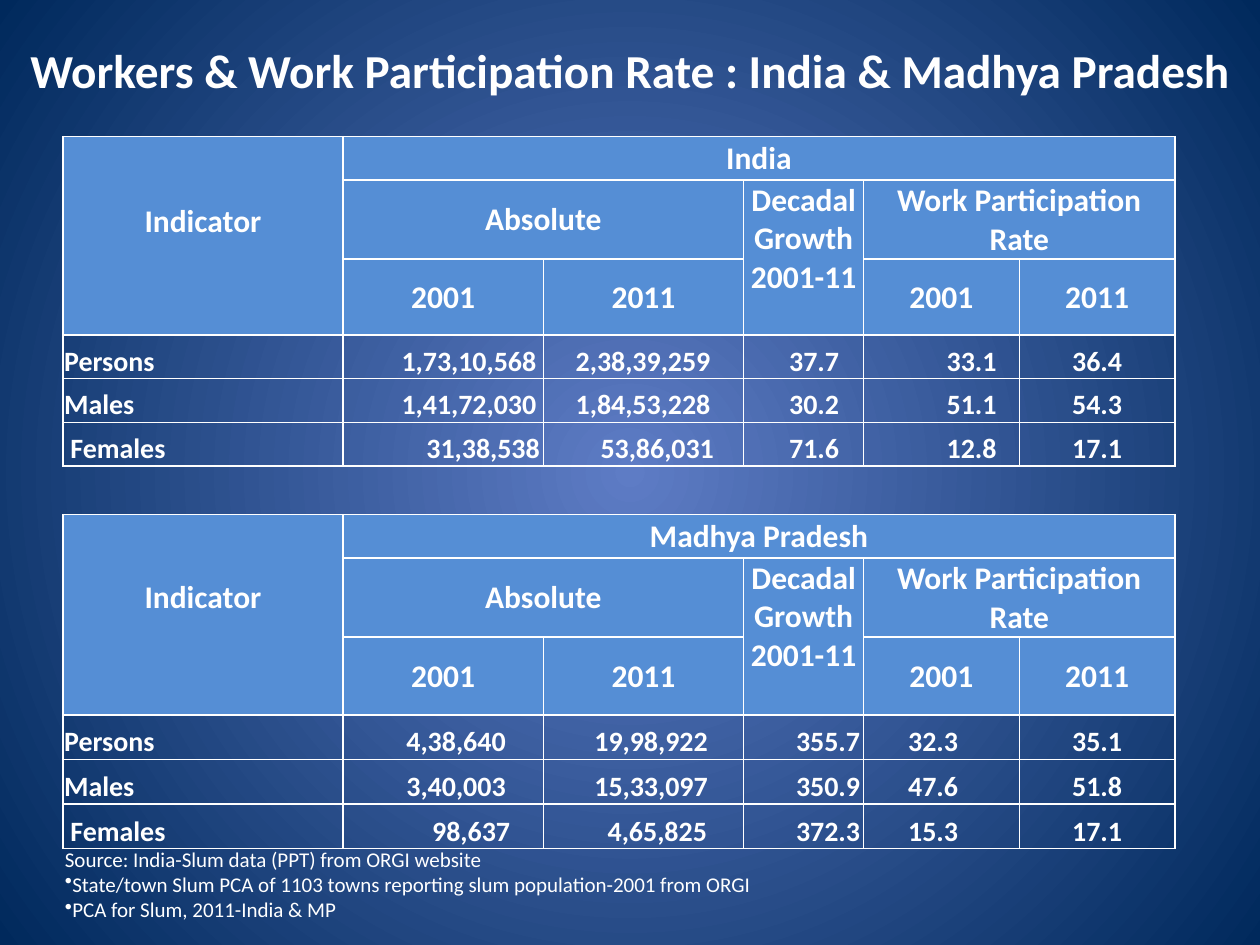
from dataclasses import dataclass

from lxml import etree
from pptx import Presentation
from pptx.dml.color import RGBColor
from pptx.enum.text import MSO_ANCHOR, PP_ALIGN
from pptx.oxml.ns import qn
from pptx.util import Pt

LEFT, MID, RIGHT = PP_ALIGN.LEFT, PP_ALIGN.CENTER, PP_ALIGN.RIGHT
TOP, CENTER, BOTTOM = MSO_ANCHOR.TOP, MSO_ANCHOR.MIDDLE, MSO_ANCHOR.BOTTOM


@dataclass(frozen=True)
class Theme:
    face: str = "Calibri"
    ink: str = "FFFFFF"
    head: str = "558ED5"
    inner: str = "5E7CC5"
    outer: str = "00295C"
    title: int = 27
    label: int = 18
    data: int = 16
    note: int = 12


class Deck:
    def __init__(self, theme):
        self.theme = theme
        self.file = Presentation()
        self.file.slide_width, self.file.slide_height = Pt(720), Pt(540)
        self.slide = self.file.slides.add_slide(self.file.slide_layouts[6])

    def glow(self):
        """Fill the background with a gradient that spreads from the centre."""
        fill = self.slide.background.fill
        fill.gradient()
        colors = (self.theme.inner, self.theme.outer)
        for stop, color in zip(fill.gradient_stops, colors):
            stop.color.rgb = RGBColor.from_string(color)
        grad = self.slide.element.find(".//" + qn("a:gradFill"))
        grad.remove(grad.find(qn("a:lin")))
        ring = etree.SubElement(grad, qn("a:path"), path="circle")
        etree.SubElement(ring, qn("a:fillToRect"),
                         dict.fromkeys("ltrb", "50000"))

    def style(self, par, size, bold=True, align=LEFT):
        par.alignment = align
        font = par.font
        font.name, font.size, font.bold = self.theme.face, Pt(size), bold
        font.color.rgb = RGBColor.from_string(self.theme.ink)

    def text(self, box, lines, size, bold=False, align=LEFT, anchor=TOP,
             dots=()):
        """Add a text box; dots holds the indexes of the bulleted lines."""
        frame = self.slide.shapes.add_textbox(*map(Pt, box)).text_frame
        frame.word_wrap, frame.vertical_anchor = True, anchor
        frame.text = "\n".join(lines)
        for i, par in enumerate(frame.paragraphs):
            self.style(par, size, bold, align)
            if i in dots:
                mark = etree.Element(qn("a:buChar"), char="•")
                par._p.get_or_add_pPr().insert(0, mark)

    def edge(self, cell):
        props = cell._tc.get_or_add_tcPr()
        for side in ("lnL", "lnR", "lnT", "lnB"):
            line = etree.SubElement(props, qn("a:" + side), w=str(Pt(1)))
            fill = etree.SubElement(line, qn("a:solidFill"))
            etree.SubElement(fill, qn("a:srgbClr"), val=self.theme.ink)

    def grid(self, left, top, cols, rows, heads):
        """Add a bordered table whose first rows, heads in number, are filled."""
        table = self.slide.shapes.add_table(
            len(rows), len(cols), Pt(left), Pt(top),
            Pt(sum(cols)), Pt(sum(rows))).table
        table.first_row = table.horz_banding = False
        for col, width in zip(table.columns, cols):
            col.width = Pt(width)
        for r, height in enumerate(rows):
            table.rows[r].height = Pt(height)
            for cell in table.rows[r].cells:
                self.edge(cell)
                if r < heads:
                    cell.fill.solid()
                    cell.fill.fore_color.rgb = RGBColor.from_string(
                        self.theme.head)
                else:
                    cell.fill.background()
                cell.margin_left = cell.margin_right = Pt(0.7)
                cell.margin_top, cell.margin_bottom = Pt(0.7), Pt(0)
        return table

    def cell(self, cell, text, size, align=MID, anchor=CENTER):
        cell.text, cell.vertical_anchor = text, anchor
        self.style(cell.text_frame.paragraphs[0], size, True, align)


COLS = (160, 114.5, 114.5, 68.5, 89, 89)
NAMES = ("Persons", "Males", "Females")
# row, column, rows spanned, columns spanned, text
HEADS = (
    (0, 0, 3, 1, "Indicator"),
    (1, 1, 1, 2, "Absolute"),
    (1, 3, 2, 1, "Decadal Growth 2001-11"),
    (1, 4, 1, 2, "Work Participation Rate"),
    (2, 1, 1, 1, "2001"), (2, 2, 1, 1, "2011"),
    (2, 4, 1, 1, "2001"), (2, 5, 1, 1, "2011"),
)


def region(deck, name, top, rows, lift, data, pads, last):
    """Add one region's table; pads are right margins, last those of Females."""
    theme = deck.theme
    table = deck.grid(36, top, COLS, rows, 3)
    for r, c, down, over, text in HEADS + ((0, 1, 1, 5, name),):
        cell = table.cell(r, c)
        if down * over > 1:
            cell.merge(table.cell(r + down - 1, c + over - 1))
        deck.cell(cell, text, theme.label, anchor=TOP if c == 3 else CENTER)
    table.cell(0, 0).margin_bottom = Pt(lift)

    for r, (label, values) in enumerate(zip(NAMES, data), 3):
        deck.cell(table.cell(r, 0), label, theme.data, LEFT, BOTTOM)
        for c, value in enumerate(values, 1):
            cell = table.cell(r, c)
            align = MID if c == 5 else RIGHT
            deck.cell(cell, value, theme.data, align, BOTTOM)
            if c < 5:
                gaps = last if label == "Females" else pads
                cell.margin_right = Pt(gaps[c - 1])
    table.cell(5, 0).margin_left = Pt(4.3)


def main():
    theme = Theme()
    deck = Deck(theme)
    deck.glow()
    deck.text((0, 12, 720, 56),
              ["Workers & Work Participation Rate : India & Madhya Pradesh"],
              theme.title, True, MID, CENTER)
    region(deck, "India", 78, (25, 45, 43.5, 25, 25, 25), 17, (
        ("1,73,10,568", "2,38,39,259", "37.7", "33.1", "36.4"),
        ("1,41,72,030", "1,84,53,228", "30.2", "51.1", "54.3"),
        ("31,38,538", "53,86,031", "71.6", "12.8", "17.1"),
    ), (4, 19, 14, 13), (2, 17, 14, 13))
    region(deck, "Madhya Pradesh", 294, (25, 45, 44.5, 25.5, 25.5, 25.5), 20, (
        ("4,38,640", "19,98,922", "355.7", "32.3", "35.1"),
        ("3,40,003", "15,33,097", "350.9", "47.6", "51.8"),
        ("98,637", "4,65,825", "372.3", "15.3", "17.1"),
    ), (21.5, 20.5, 2, 35), (19, 21, 2, 35))
    deck.text((30, 480, 672, 51), [
        "Source: India-Slum data (PPT) from ORGI website",
        "State/town Slum PCA of 1103 towns reporting slum population-2001"
        " from ORGI",
        "PCA for Slum, 2011-India & MP",
    ], theme.note, dots=(1, 2))
    deck.file.save("out.pptx")


if __name__ == "__main__":
    main()
